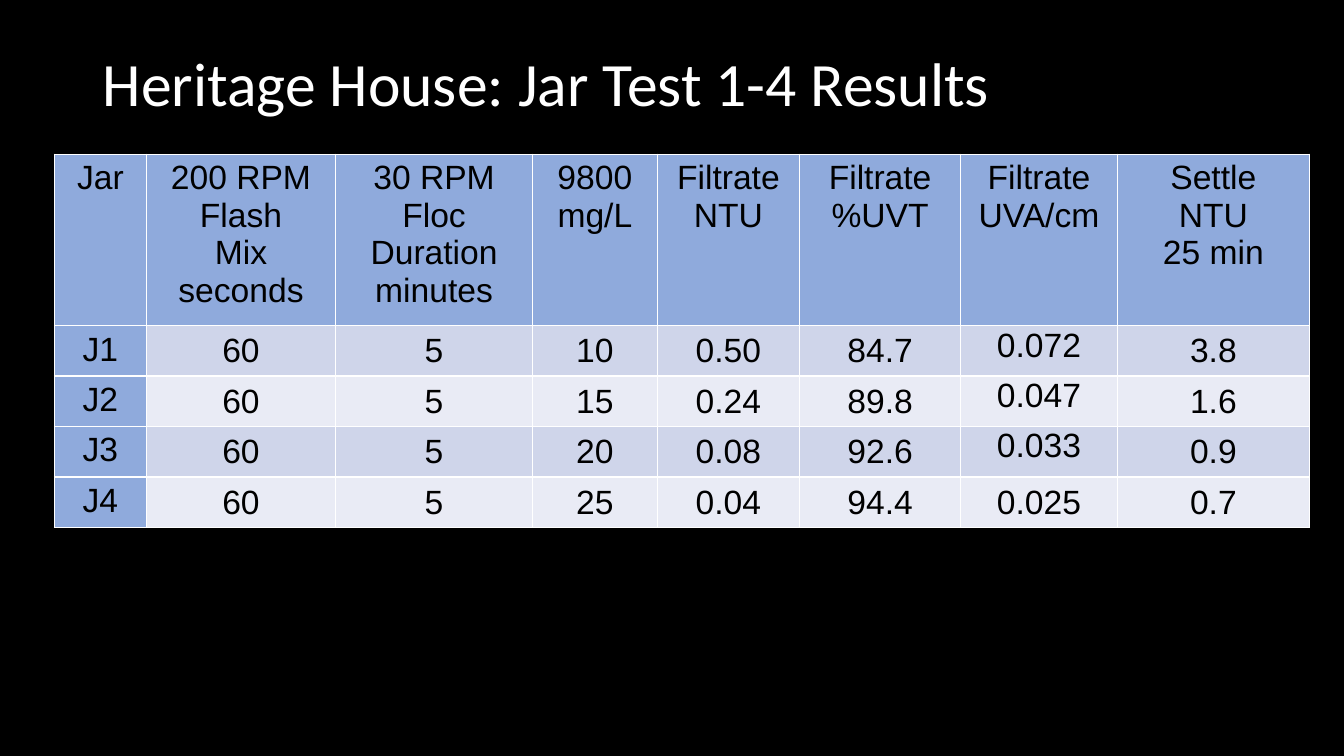
import pptx
import pptx.util
import pptx.dml.color
import pptx.enum.text
import pptx.oxml
from pptx.oxml.ns import nsdecls

Inches = pptx.util.Inches
Pt = pptx.util.Pt
RGBColor = pptx.dml.color.RGBColor
Align = pptx.enum.text.PP_ALIGN
Anchor = pptx.enum.text.MSO_ANCHOR

BLACK = RGBColor(0x00, 0x00, 0x00)
WHITE = RGBColor(0xFF, 0xFF, 0xFF)
HEADER_BLUE = RGBColor(0x8F, 0xAA, 0xDC)
BANDS = [RGBColor(0xCF, 0xD5, 0xEA), RGBColor(0xE9, 0xEB, 0xF5)]

COLUMN_WIDTHS = [0.91, 1.88, 1.95, 1.24, 1.41, 1.6, 1.55, 1.91]
HEADER_HEIGHT, ROW_HEIGHT = 1.59, 0.47
UVA_COLUMN = 6

JAR_RESULTS = [
    ["Jar", "200 RPM\nFlash\nMix\nseconds", "30 RPM Floc\nDuration\nminutes", "9800\nmg/L",
     "Filtrate\nNTU", "Filtrate\n%UVT", "Filtrate\nUVA/cm", "Settle\nNTU\n25 min"],
    ["J1", "60", "5", "10", "0.50", "84.7", "0.072", "3.8"],
    ["J2", "60", "5", "15", "0.24", "89.8", "0.047", "1.6"],
    ["J3", "60", "5", "20", "0.08", "92.6", "0.033", "0.9"],
    ["J4", "60", "5", "25", "0.04", "94.4", "0.025", "0.7"],
]


def set_borders(cell):
    """Draw a thin white line on all four sides of a cell."""
    properties = cell._tc.get_or_add_tcPr()
    for position, side in enumerate(["lnL", "lnR", "lnT", "lnB"]):
        line = pptx.oxml.parse_xml(
            f'<a:{side} {nsdecls("a")} w="{Pt(1)}"><a:solidFill>'
            f'<a:srgbClr val="{WHITE}"/></a:solidFill></a:{side}>')
        properties.insert(position, line)


# Slide with a black background
presentation = pptx.Presentation()
presentation.slide_width = Inches(13.33)
presentation.slide_height = Inches(7.5)
slide = presentation.slides.add_slide(presentation.slide_layouts[6])
slide.background.fill.solid()
slide.background.fill.fore_color.rgb = BLACK

# Title
title = slide.shapes.add_textbox(Inches(0.92), Inches(0.13), Inches(11.5), Inches(1.45))
title.text_frame.word_wrap = True
title.text_frame.vertical_anchor = Anchor.MIDDLE
paragraph = title.text_frame.paragraphs[0]
paragraph.text = "Heritage House: Jar Test 1-4 Results"
paragraph.line_spacing = 0.9
paragraph.font.name = "Calibri"
paragraph.font.size = Pt(44)
paragraph.font.color.rgb = WHITE

# Table grid
row_count = len(JAR_RESULTS)
table = slide.shapes.add_table(
    row_count, len(COLUMN_WIDTHS), Inches(0.54), Inches(1.53), Inches(sum(COLUMN_WIDTHS)),
    Inches(HEADER_HEIGHT + ROW_HEIGHT * (row_count - 1))).table
table.first_col = True
for column, width in zip(table.columns, COLUMN_WIDTHS):
    column.width = Inches(width)
for index, row in enumerate(table.rows):
    row.height = Inches(ROW_HEIGHT if index else HEADER_HEIGHT)

# Table cells
for row_index, row_values in enumerate(JAR_RESULTS):
    for column_index, value in enumerate(row_values):
        cell = table.cell(row_index, column_index)
        is_heading = row_index == 0 or column_index == 0
        cell.fill.solid()
        cell.fill.fore_color.rgb = HEADER_BLUE if is_heading else BANDS[(row_index - 1) % 2]
        set_borders(cell)

        # Readings sit in the middle, except the UVA ones above the last row
        if not is_heading:
            cell.margin_left = cell.margin_top = cell.margin_right = Inches(0.01)
            cell.margin_bottom = 0
            if column_index != UVA_COLUMN or row_index == row_count - 1:
                cell.vertical_anchor = Anchor.MIDDLE

        cell.text = value
        for paragraph in cell.text_frame.paragraphs:
            paragraph.alignment = Align.CENTER
            paragraph.font.name = "Arial"
            paragraph.font.size = Pt(24)
            paragraph.font.bold = False
            paragraph.font.color.rgb = BLACK

presentation.save("out.pptx")
